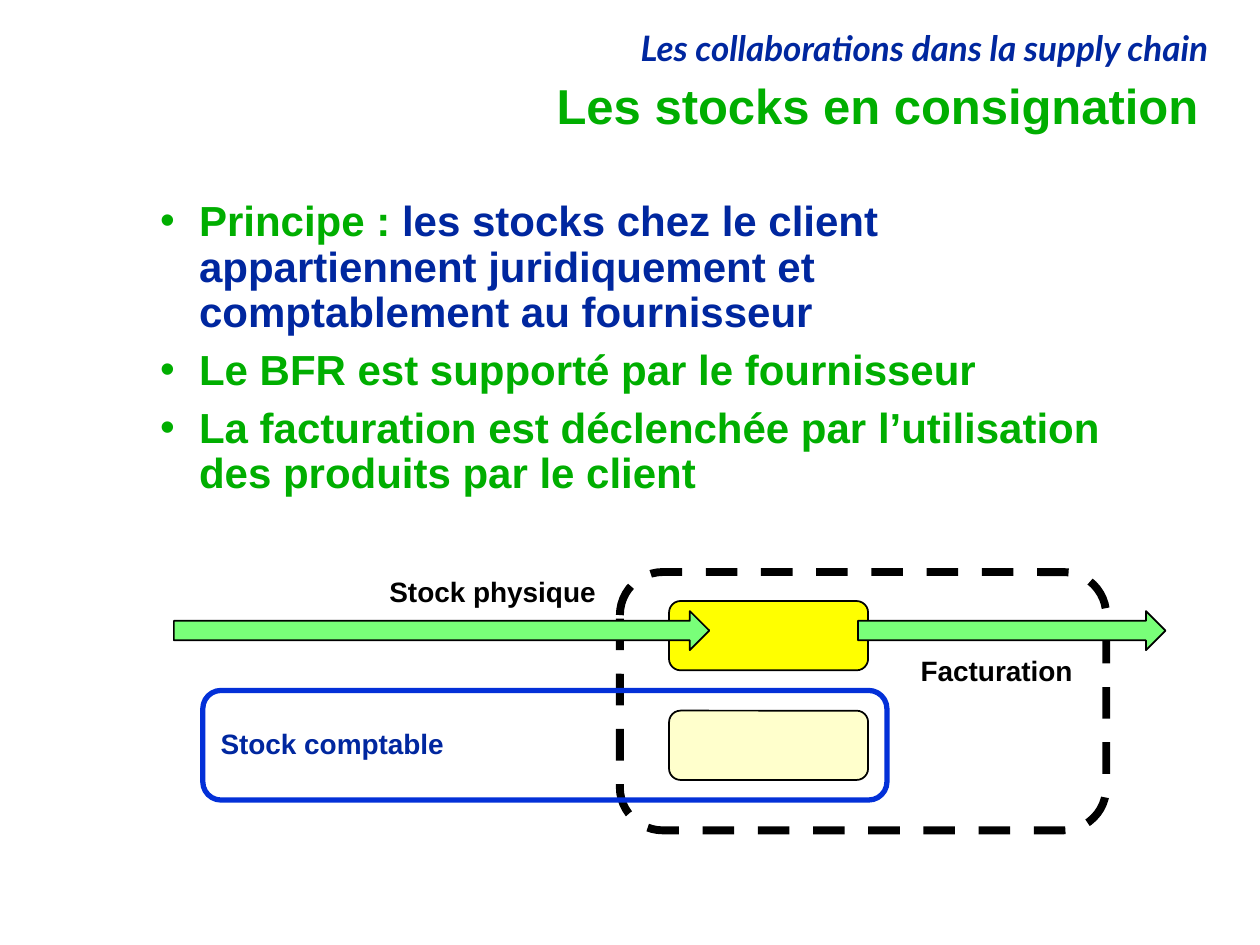
from pptx import Presentation
from pptx.dml.color import RGBColor
from pptx.enum.dml import MSO_LINE as Dash
from pptx.enum.shapes import MSO_SHAPE as Shape
from pptx.enum.text import MSO_ANCHOR as Anchor, MSO_AUTO_SIZE as AutoSize, PP_ALIGN as Align
from pptx.util import Inches, Pt

GREEN, NAVY, BLACK = "00AE00", "00279F", "000000"


def rgb(value):
    return RGBColor.from_string(value)


def write(para, text, size=16, color=BLACK, font="Arial", italic=False, align=Align.LEFT):
    """Append a bold run to the paragraph and format both."""
    para.alignment = align
    para.line_spacing = 0.9
    span = para.add_run()
    span.text = text
    span.font.name = font
    span.font.size = Pt(size)
    span.font.bold = True
    span.font.italic = italic
    span.font.color.rgb = rgb(color)


deck = Presentation()
deck.slide_width, deck.slide_height = Inches(10), Inches(7.5)
page = deck.slides.add_slide(deck.slide_layouts[1])
title, body = page.placeholders

# Heading
header = page.shapes.add_textbox(Inches(1.61), Inches(0.2), Inches(8.08), Inches(0.4))
header.text_frame.word_wrap = True
write(header.text_frame.paragraphs[0], "Les collaborations dans la supply chain",
      size=20, color=NAVY, font="Lato", italic=True, align=Align.RIGHT)

title.left, title.top, title.width, title.height = map(Inches, (1.69, 0.61, 7.92, 0.5))
title.text_frame.auto_size = AutoSize.NONE
title.text_frame.vertical_anchor = Anchor.MIDDLE
write(title.text_frame.paragraphs[0], "Les stocks en consignation",
      size=28, color=GREEN, align=Align.RIGHT)

# Bullet list
bullets = [
    [("Principe : ", GREEN),
     ("les stocks chez le client appartiennent juridiquement et comptablement au fournisseur", NAVY)],
    [("Le BFR est supporté par le fournisseur", GREEN)],
    [("La facturation est déclenchée par l’utilisation des produits par le client", GREEN)],
]
body.left, body.top, body.width, body.height = map(Inches, (1.17, 1.54, 7.83, 2.6))
frame = body.text_frame
frame.auto_size = AutoSize.NONE
for index, parts in enumerate(bullets):
    para = frame.add_paragraph() if index else frame.paragraphs[0]
    para.space_before = Pt(7.2 if index else 0)
    props = para._p.get_or_add_pPr()
    props.set("marL", str(Inches(0.31)))
    props.set("indent", str(-Inches(0.31)))
    for text, color in parts:
        write(para, text, size=24, color=color)

# Stock flow diagram, from back to front
flow = [
    (Shape.ROUNDED_RECTANGLE, (4.92, 4.54, 3.86, 2.05), None, BLACK, 4.5, Dash.DASH),
    (Shape.ROUNDED_RECTANGLE, (5.31, 4.77, 1.58, 0.55), "FFFF00", BLACK, 1, None),
    (Shape.RIGHT_ARROW, (1.38, 4.85, 4.25, 0.31), "79FF79", BLACK, 1, None),
    (Shape.RIGHT_ARROW, (6.81, 4.85, 2.44, 0.31), "79FF79", BLACK, 1, None),
    (Shape.ROUNDED_RECTANGLE, (5.31, 5.64, 1.58, 0.55), "FFFFCC", BLACK, 1, None),
    (Shape.ROUNDED_RECTANGLE, (1.61, 5.48, 5.43, 0.87), None, "0330D8", 3, None),
]
for kind, place, fill, line, weight, dash in flow:
    box = page.shapes.add_shape(kind, *map(Inches, place))
    box.shadow.inherit = False
    if fill:
        box.fill.solid()
        box.fill.fore_color.rgb = rgb(fill)
    else:
        box.fill.background()
    box.line.color.rgb = rgb(line)
    box.line.width = Pt(weight)
    if dash:
        box.line.dash_style = dash

# The last and frontmost shape is the accounting stock
box.text_frame.vertical_anchor = Anchor.MIDDLE
write(box.text_frame.paragraphs[0], "Stock comptable", color=NAVY)

for text, left, top, width in [("Stock physique", 2.98, 4.54, 1.86),
                               ("Facturation", 7.2, 5.17, 1.42)]:
    label = page.shapes.add_textbox(Inches(left), Inches(top), Inches(width), Inches(0.34))
    label.text_frame.word_wrap = False
    write(label.text_frame.paragraphs[0], text, align=Align.CENTER)

deck.save("out.pptx")
